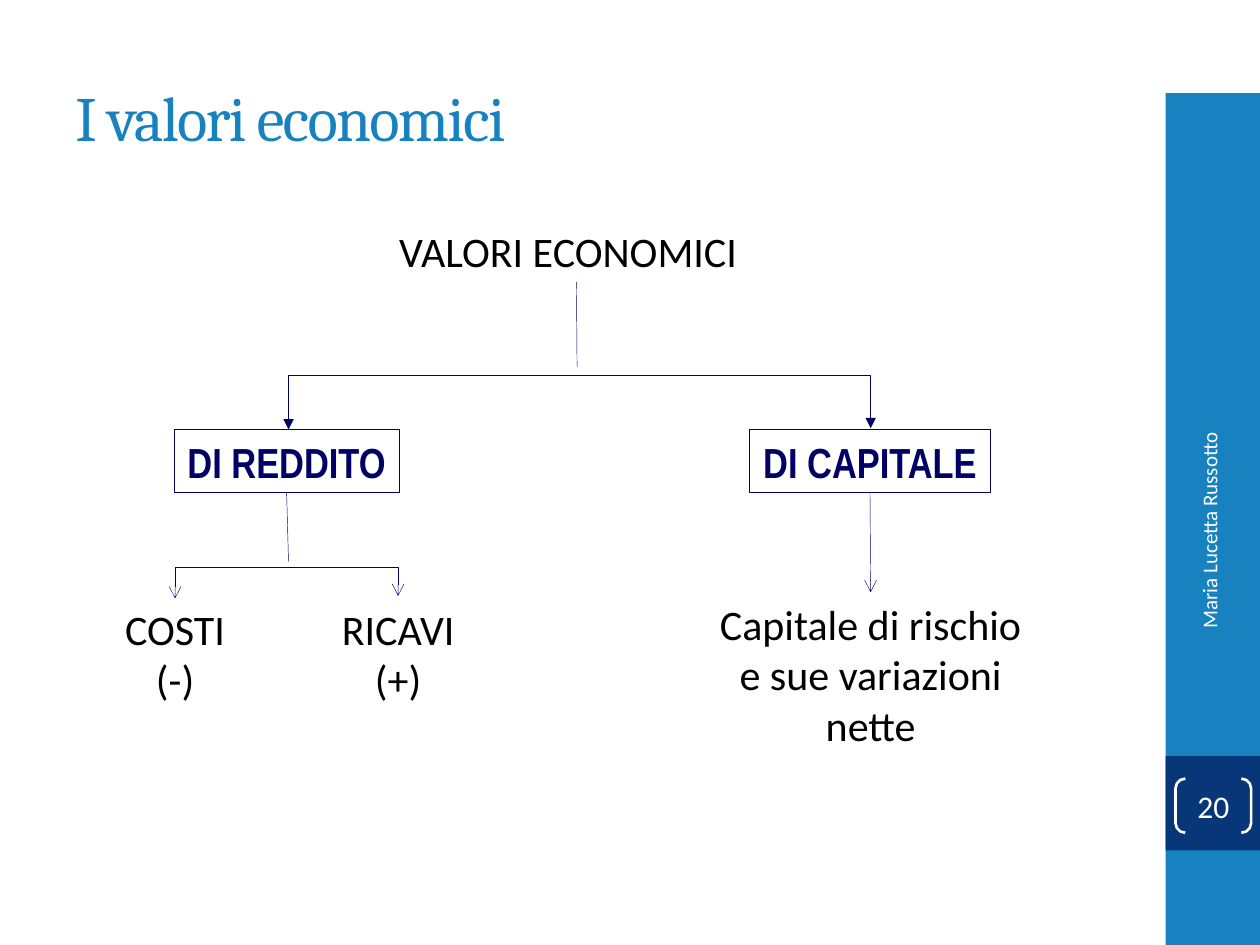
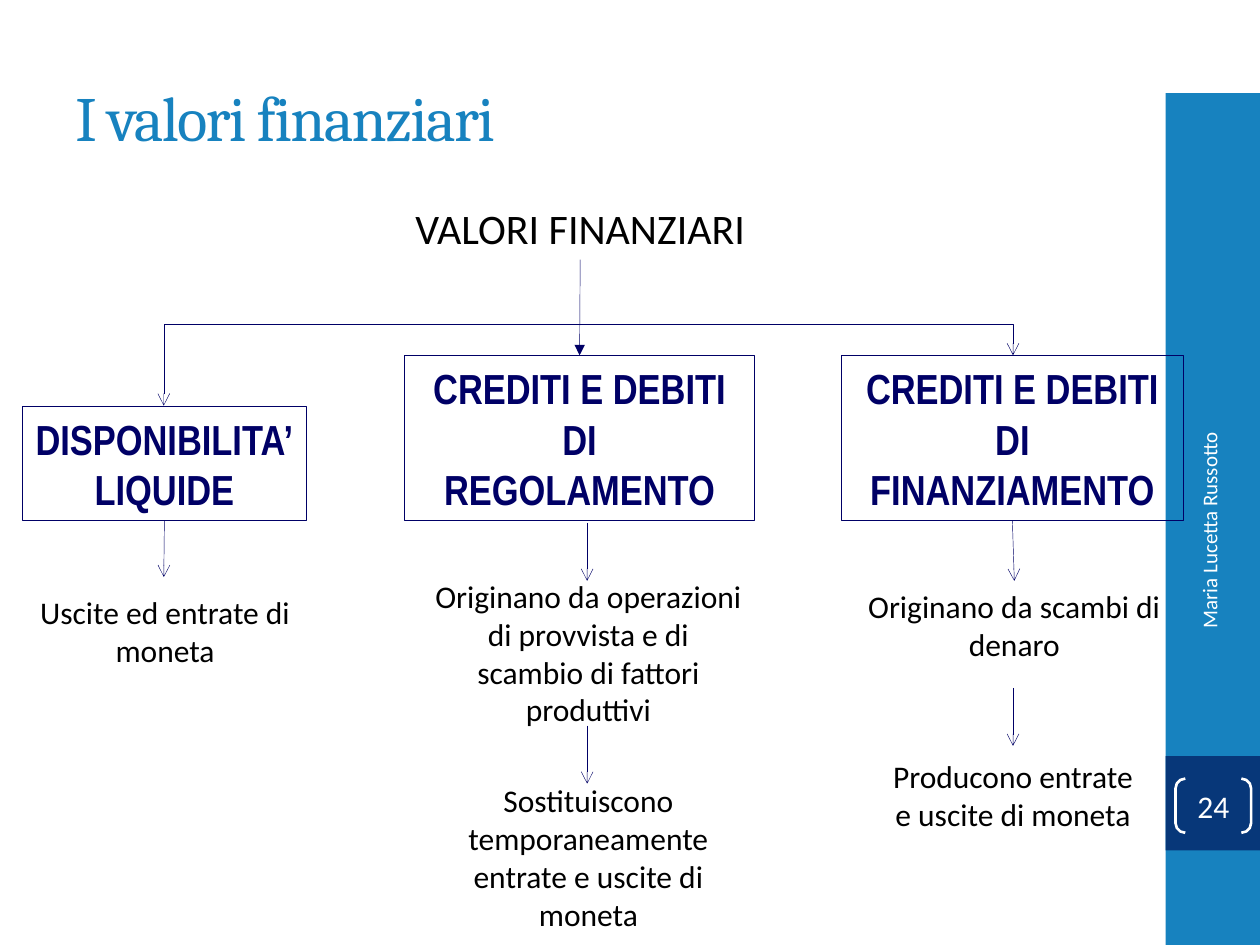
from lxml import etree
from pptx import Presentation
from pptx import util as u
from pptx.dml import color
from pptx.enum import shapes, text
from pptx.oxml import ns

BLUE, DARK_BLUE, NAVY = "1782BF", "073779", "000066"
BLACK, WHITE = "000000", "FFFFFF"
TITLE_FONT, BODY_FONT, BOX_FONT = "Cambria", "Calibri", "Arial Narrow"
TOP, BOTTOM = 0, 2  # connection sites of a rectangle
HAIRLINE = 0.25
TITLE_AREA = (0.5, 0.3, 8.33, 1.25)
SIDEBAR_AREA = (9.25, 0.74, 0.75, 6.76)
TREE_AREA = (0, 1.5, 9.4, 6)
CENTER, RIGHT = text.PP_ALIGN.CENTER, text.PP_ALIGN.RIGHT
MIDDLE = text.MSO_ANCHOR.MIDDLE


def rgb(value):
    return color.RGBColor.from_string(value)


def inches(values):
    return [u.Inches(value) for value in values]


def within(area, x, y, *size):
    """Shift a position given relative to an area onto the slide."""
    return (area[0] + x, area[1] + y, *size)


def write(shape, words, size=24, font=BODY_FONT, hue=BLACK, bold=False, align=None,
          anchor=text.MSO_ANCHOR.TOP, wrap=True, grow=True, margin=None, spacing=None):
    """Fill a shape with one paragraph for each line of words."""
    frame = shape.text_frame
    frame.word_wrap = wrap
    frame.vertical_anchor = anchor
    frame.auto_size = (text.MSO_AUTO_SIZE.SHAPE_TO_FIT_TEXT if grow
                       else text.MSO_AUTO_SIZE.NONE)
    if margin is not None:
        frame.margin_left = frame.margin_right = u.Inches(margin)
        frame.margin_top = frame.margin_bottom = u.Inches(margin)
    for number, line in enumerate(words.split("\n")):
        paragraph = frame.add_paragraph() if number else frame.paragraphs[0]
        paragraph.alignment = align
        run = paragraph.add_run()
        run.text = line
        run.font.size, run.font.name, run.font.bold = u.Pt(size), font, bold
        run.font.color.rgb = rgb(hue)
        if spacing is not None:
            run.font._element.set("spc", str(spacing * 100))
    return shape


def label(slide, box, words, **style):
    return write(slide.shapes.add_textbox(*inches(box)), words, **style)


def outline(slide, box, kind=shapes.MSO_SHAPE.RECTANGLE, fill=None, line=None, weight=HAIRLINE):
    shape = slide.shapes.add_shape(kind, *inches(box))
    shape.shadow.inherit = False
    if fill:
        shape.fill.solid()
        shape.fill.fore_color.rgb = rgb(fill)
    else:
        shape.fill.background()
    if line:
        shape.line.color.rgb = rgb(line)
        shape.line.width = u.Pt(weight)
    else:
        shape.line.fill.background()
    return shape


def category(slide, box, words, wrap=True):
    return write(outline(slide, box, line=NAVY), words, font=BOX_FONT, hue=NAVY, bold=True,
                 align=CENTER, anchor=text.MSO_ANCHOR.BOTTOM, wrap=wrap)


def style_line(connector, head=None, tail=None):
    connector.line.color.rgb = rgb(NAVY)
    connector.line.width = u.Pt(HAIRLINE)
    line = connector.line._ln
    for end, arrow in (("a:headEnd", head), ("a:tailEnd", tail)):
        if arrow:
            etree.SubElement(line, ns.qn(end), type=arrow)
    etree.SubElement(connector._element.spPr, ns.qn("a:effectLst"))


def stem(slide, start, end, tail=None, source=None, target=None):
    """Straight line, joined to the bottom of source and the top of target."""
    line = slide.shapes.add_connector(shapes.MSO_CONNECTOR.STRAIGHT, *inches((*start, *end)))
    if source is not None:
        line.begin_connect(source, BOTTOM)
    if target is not None:
        line.end_connect(target, TOP)
    style_line(line, tail=tail)


def fork(slide, left_tip, right_tip, bus_y, arrow):
    """Elbow line that rises from the left tip to bus_y and drops to the right tip."""
    (x1, y1), (x2, y2) = left_tip, right_tip
    rise, span = y1 - y2, x2 - x1
    mid_x, mid_y = (x1 + x2) / 2, (y1 + y2) / 2
    # Lay the elbow out sideways, then turn it by a quarter
    elbow = slide.shapes.add_connector(
        shapes.MSO_CONNECTOR.ELBOW,
        *inches((mid_x + rise / 2, mid_y + span / 2, mid_x - rise / 2, mid_y - span / 2)))
    properties = elbow._element.spPr
    properties.find(ns.qn("a:xfrm")).set("rot", "5400000")
    geometry = properties.find(ns.qn("a:prstGeom"))
    guides = geometry.find(ns.qn("a:avLst"))
    if guides is None:
        guides = etree.SubElement(geometry, ns.qn("a:avLst"))
    ratio = round((y1 - bus_y) / rise * 100000)
    etree.SubElement(guides, ns.qn("a:gd"), name="adj1", fmla=f"val {ratio}")
    style_line(elbow, head=arrow, tail=arrow)


def title(slide, area, words):
    label(slide, area, words, size=36, font=TITLE_FONT, hue=BLUE, anchor=MIDDLE,
          grow=False, spacing=-1)


def sidebar(slide, area):
    outline(slide, area, fill=BLUE)
    outline(slide, within(area, 0, 5.26, area[2], 0.75), fill=DARK_BLUE)


def footer(slide, area, number):
    author = label(slide, within(area, -0.95, 3.69, 2.59, 0.4), "Maria Lucetta Russotto",
                   size=12, hue=WHITE, align=RIGHT, anchor=MIDDLE, grow=False)
    author.rotation = 270
    brackets = outline(slide, within(area, 0.08, 5.44, 0.6, 0.43),
                       shapes.MSO_SHAPE.DOUBLE_BRACKET, line=WHITE, weight=1.5)
    brackets.adjustments[0] = 0.18
    write(brackets, number, size=18, hue=WHITE, align=CENTER, anchor=MIDDLE,
          grow=False, margin=0)


def economic_tree(slide, area):
    def at(*place):
        return within(area, *place)

    root = label(slide, at(3.07, 0.24, 3.01, 0.5), "VALORI ECONOMICI")
    income = category(slide, at(1.38, 1.91, 1.79, 0.5), "DI REDDITO", wrap=False)
    capital = category(slide, at(5.95, 1.91, 1.91, 0.5), "DI CAPITALE", wrap=False)
    # Outcomes
    for x, words in ((0.82, "COSTI\n(-)"), (2.59, "RICAVI\n(+)")):
        label(slide, at(x, 3.24, 1.14, 0.91), words, align=CENTER)
    equity = label(slide, at(5.59, 3.2, 2.64, 0.91),
                   "Capitale di rischio e sue variazioni nette", align=CENTER)
    # Branches
    stem(slide, at(4.58, 0.75), at(4.58, 1.41), source=root)
    fork(slide, at(2.29, 1.91), at(6.91, 1.9), area[1] + 1.47, "triangle")
    stem(slide, at(6.91, 2.41), at(6.91, 3.2), "arrow", capital, equity)
    stem(slide, at(2.28, 2.41), at(2.29, 2.96), source=income)
    fork(slide, at(1.39, 3.25), at(3.16, 3.23), area[1] + 3, "arrow")


def financial_tree(slide, area):
    def at(*place):
        return within(area, *place)

    def remark(x, y, width, height, words):
        return label(slide, at(x, y, width, height), words, size=18, align=CENTER)

    root = label(slide, at(3.1, 0.06, 3.01, 0.5), "VALORI FINANZIARI", align=CENTER)
    # Categories
    cash = category(slide, at(0.18, 1.72, 2.25, 0.91), "DISPONIBILITA’\nLIQUIDE", wrap=False)
    trade = category(slide, at(3.21, 1.32, 2.78, 1.31), "CREDITI E DEBITI DI\nREGOLAMENTO")
    loans = category(slide, at(6.68, 1.32, 2.71, 1.31), "CREDITI E DEBITI DI\nFINANZIAMENTO")
    # Remarks below them
    remark(-0.01, 3.16, 2.64, 0.71, "Uscite ed entrate di moneta")
    remark(3.35, 3.03, 2.64, 1.01,
           "Originano da operazioni di provvista e di scambio di fattori produttivi")
    remark(3.35, 4.65, 2.64, 1.01, "Sostituiscono temporaneamente entrate e uscite di moneta")
    origin = remark(6.73, 3.11, 2.64, 0.71, "Originano da scambi di denaro")
    remark(6.97, 4.46, 2.14, 0.71, "Producono entrate e uscite di moneta")
    # Branches
    stem(slide, at(4.6, 0.56), at(4.6, 1.32), "triangle", root, trade)
    fork(slide, at(1.3, 1.72), at(8.04, 1.32), area[1] + 1.07, "arrow")
    stem(slide, at(1.3, 2.63), at(1.3, 3.08), "arrow", cash)
    stem(slide, at(8.04, 2.63), at(8.05, 3.11), "arrow", loans, origin)
    for x, y in ((4.66, 2.65), (4.66, 4.26), (8.04, 3.96)):
        stem(slide, at(x, y), at(x, y + 0.46), "arrow")


def main():
    deck = Presentation()
    deck.slide_width, deck.slide_height = inches((10, 7.5))
    for heading, number, tree in (("I valori economici", "20", economic_tree),
                                  ("I valori finanziari", "24", financial_tree)):
        slide = deck.slides.add_slide(deck.slide_layouts[6])
        sidebar(slide, SIDEBAR_AREA)
        title(slide, TITLE_AREA, heading)
        tree(slide, TREE_AREA)
        footer(slide, SIDEBAR_AREA, number)
    deck.save("out.pptx")


if __name__ == "__main__":
    main()
